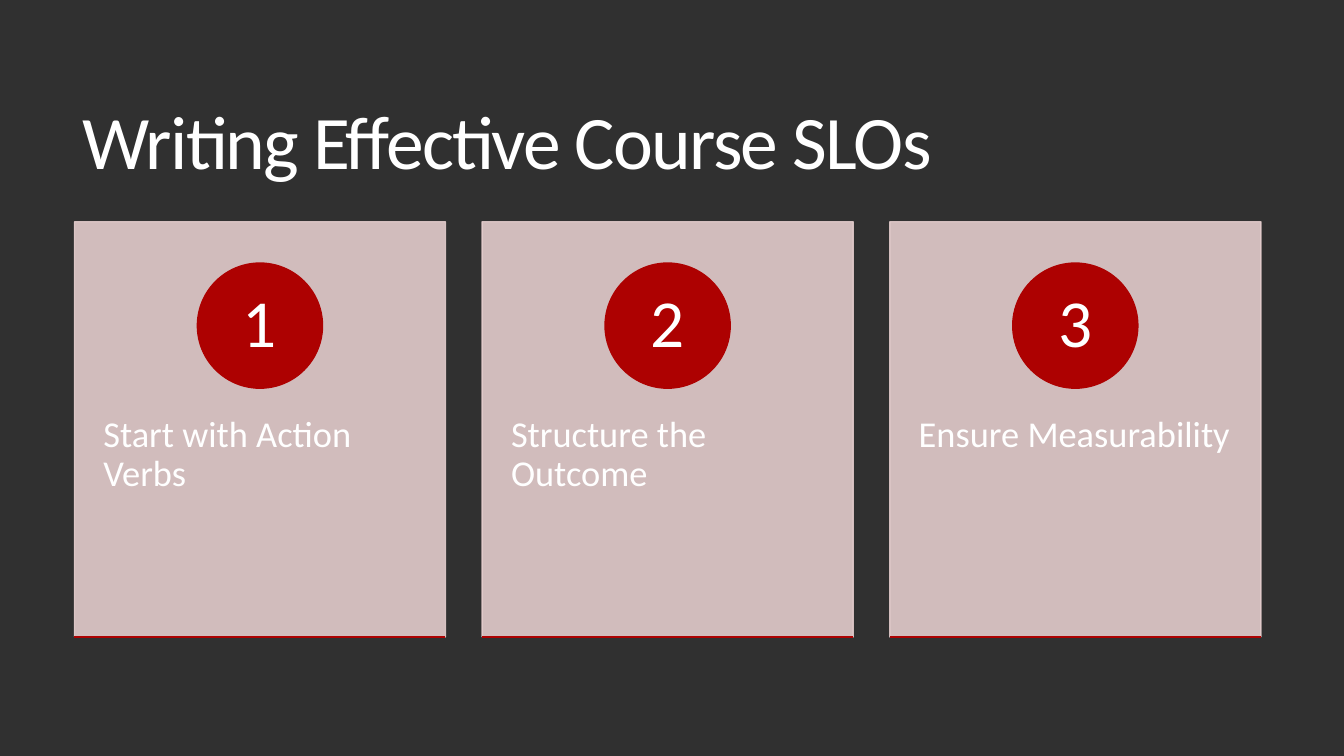
from lxml import etree
from pptx import Presentation
from pptx.dml.color import RGBColor
from pptx.enum.shapes import MSO_CONNECTOR, MSO_SHAPE
from pptx.enum.text import MSO_ANCHOR, MSO_AUTO_SIZE, PP_ALIGN
from pptx.oxml.ns import qn
from pptx.util import Pt

RECTANGLE, OVAL = MSO_SHAPE.RECTANGLE, MSO_SHAPE.OVAL
STRAIGHT = MSO_CONNECTOR.STRAIGHT
TOP, MIDDLE = MSO_ANCHOR.TOP, MSO_ANCHOR.MIDDLE
LEFT, CENTER = PP_ALIGN.LEFT, PP_ALIGN.CENTER
NO_AUTOFIT = MSO_AUTO_SIZE.NONE

CHARCOAL = RGBColor(0x30, 0x30, 0x30)
WHITE = RGBColor(0xFF, 0xFF, 0xFF)
BLUSH = RGBColor(0xE3, 0xCC, 0xCC)
RED = RGBColor(0xAD, 0x01, 0x01)

FONT = "Calibri"
TITLE = "Writing Effective Course SLOs"
STEPS = ["Start with Action Verbs", "Structure the Outcome", "Ensure Measurability"]

CARD_LEFT, CARD_TOP = 53.2, 158.4
CARD_WIDTH, CARD_HEIGHT = 265, 296.6
CARD_PITCH = 291.2
CIRCLE_TOP, CIRCLE_SIZE = 187.9, 89.4
LABEL_TOP, LABEL_HEIGHT = 271.4, 177.8


def apply_format(target, values):
    for name, value in values.items():
        setattr(target, name, value)


def write_text(shape, text, size, spacing, alignment, anchor, margins):
    frame = shape.text_frame
    horizontal, vertical = margins
    apply_format(frame, {
        "text": text,
        "word_wrap": True,
        "auto_size": NO_AUTOFIT,
        "vertical_anchor": anchor,
        "margin_left": Pt(horizontal),
        "margin_right": Pt(horizontal),
        "margin_top": Pt(vertical),
        "margin_bottom": Pt(vertical),
    })
    paragraph = frame.paragraphs[0]
    apply_format(paragraph, {"alignment": alignment, "line_spacing": spacing})
    font = paragraph.runs[0].font
    apply_format(font, {"name": FONT, "size": Pt(size), "bold": False})
    font.color.rgb = WHITE


def set_opacity(shape, percent):
    for color in shape._element.spPr.iter(qn("a:srgbClr")):
        etree.SubElement(color, qn("a:alpha"), val=str(percent * 1000))


def add_title(slide):
    title = slide.shapes.title
    apply_format(title, {"left": Pt(51.8), "top": Pt(39.6),
                         "width": Pt(848.2), "height": Pt(130.3)})
    write_text(title, TITLE, 54, 0.85, LEFT, MIDDLE, (7.2, 3.6))
    title.text_frame.paragraphs[0].runs[0].font._element.set("spc", "-120")


def add_filled_shape(slide, kind, left, top, width, height, color):
    shape = slide.shapes.add_shape(kind, Pt(left), Pt(top), Pt(width), Pt(height))
    shape.shadow.inherit = False
    shape.fill.solid()
    shape.fill.fore_color.rgb = color
    shape.line.color.rgb = color
    shape.line.width = Pt(1)
    return shape


def add_label(slide, left, text):
    label = slide.shapes.add_textbox(Pt(left), Pt(LABEL_TOP), Pt(CARD_WIDTH), Pt(LABEL_HEIGHT))
    write_text(label, text, 26, 0.9, LEFT, TOP, (20.6, 25.9))


def add_number_circle(slide, left, number):
    circle = add_filled_shape(slide, OVAL, left, CIRCLE_TOP, CIRCLE_SIZE, CIRCLE_SIZE, RED)
    write_text(circle, str(number), 48, 0.9, CENTER, MIDDLE, (7.2, 0.7))


def add_base_line(slide, left):
    bottom = Pt(CARD_TOP + CARD_HEIGHT)
    line = slide.shapes.add_connector(STRAIGHT, Pt(left), bottom, Pt(left + CARD_WIDTH), bottom)
    line.line.color.rgb = RED
    line.line.width = Pt(1)
    etree.SubElement(line._element.spPr, qn("a:effectLst"))


def add_step_card(slide, left, number, text):
    card = add_filled_shape(slide, RECTANGLE, left, CARD_TOP, CARD_WIDTH, CARD_HEIGHT, BLUSH)
    set_opacity(card, 90)
    add_label(slide, left, text)
    add_number_circle(slide, left + (CARD_WIDTH - CIRCLE_SIZE) / 2, number)
    add_base_line(slide, left)


def main():
    presentation = Presentation()
    apply_format(presentation, {"slide_width": Pt(960), "slide_height": Pt(540)})
    slide = presentation.slides.add_slide(presentation.slide_layouts[5])
    slide.background.fill.solid()
    slide.background.fill.fore_color.rgb = CHARCOAL
    add_title(slide)
    for index, text in enumerate(STEPS):
        add_step_card(slide, CARD_LEFT + index * CARD_PITCH, index + 1, text)
    presentation.save("out.pptx")


if __name__ == "__main__":
    main()
